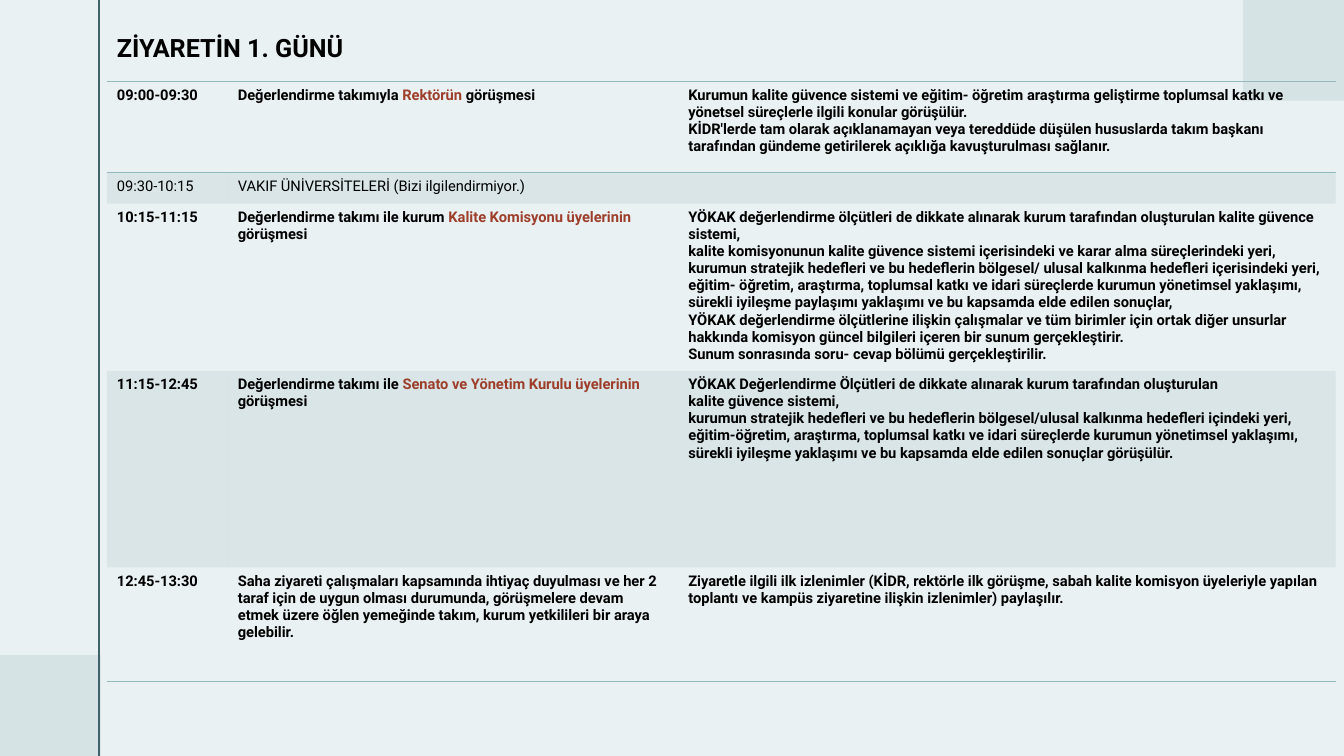
from lxml import etree
from pptx import Presentation
from pptx.dml.color import RGBColor
from pptx.enum.shapes import MSO_CONNECTOR, MSO_SHAPE
from pptx.enum.text import MSO_AUTO_SIZE
from pptx.oxml.ns import qn
from pptx.util import Pt

COLORS = {
    "background": "EAF1F2",
    "corner": "D5E3E5",
    "rail": "40636A",
    "table": "95B8BF",
    "text": "000000",
    "accent": "9D3E2B",
}
FONT = "Roboto"
WIDTH, HEIGHT = 960, 540
CORNER = 72
BODY_SIZE = 10.5
NO_STYLE = "{2D5ABB26-0587-4C30-8999-92F81FD0307C}"

COLUMN_WIDTHS = [86.4, 321.84, 469.44]
ROW_HEIGHTS = [64.8, 22.32, 119.52, 140.4, 81.36]
SHADED_ROWS = {1, 3}
PLAIN_ROWS = {1}
ROW_BORDERS = {0: ("lnT", "lnB"), 4: ("lnB",)}

# Asterisks enclose accented words; each line is a paragraph
SCHEDULE = [
    ("09:00-09:30",
     "Değerlendirme takımıyla *Rektörün *görüşmesi",
     "Kurumun kalite güvence sistemi ve eğitim- öğretim araştırma geliştirme toplumsal "
     "katkı ve yönetsel süreçlerle ilgili konular görüşülür.\n"
     "KİDR'lerde tam olarak açıklanamayan veya tereddüde düşülen hususlarda takım başkanı "
     "tarafından gündeme getirilerek açıklığa kavuşturulması sağlanır."),
    ("09:30-10:15", "VAKIF ÜNİVERSİTELERİ (Bizi ilgilendirmiyor.)", ""),
    ("10:15-11:15",
     "Değerlendirme takımı ile kurum *Kalite Komisyonu üyelerinin *görüşmesi",
     "YÖKAK değerlendirme ölçütleri de dikkate alınarak kurum tarafından oluşturulan "
     "kalite güvence sistemi,\n"
     "kalite komisyonunun kalite güvence sistemi içerisindeki ve karar alma süreçlerindeki "
     "yeri, kurumun stratejik hedefleri ve bu hedeflerin bölgesel/ ulusal kalkınma "
     "hedefleri içerisindeki yeri, eğitim- öğretim, araştırma, toplumsal katkı ve idari "
     "süreçlerde kurumun yönetimsel yaklaşımı, sürekli iyileşme paylaşımı yaklaşımı ve bu "
     "kapsamda elde edilen sonuçlar,\n"
     "YÖKAK değerlendirme ölçütlerine ilişkin çalışmalar ve tüm birimler için ortak diğer "
     "unsurlar hakkında komisyon güncel bilgileri içeren bir sunum gerçekleştirir.\n"
     "Sunum sonrasında soru- cevap bölümü gerçekleştirilir."),
    ("11:15-12:45",
     "Değerlendirme takımı ile *Senato ve Yönetim Kurulu üyelerinin *görüşmesi",
     "YÖKAK Değerlendirme Ölçütleri de dikkate alınarak kurum tarafından oluşturulan\n"
     "kalite güvence sistemi,\n"
     "kurumun stratejik hedefleri ve bu hedeflerin bölgesel/ulusal kalkınma hedefleri "
     "içindeki yeri, eğitim-öğretim, araştırma, toplumsal katkı ve idari süreçlerde "
     "kurumun yönetimsel yaklaşımı, sürekli iyileşme yaklaşımı ve bu kapsamda elde edilen "
     "sonuçlar görüşülür."),
    ("12:45-13:30",
     "Saha ziyareti çalışmaları kapsamında ihtiyaç duyulması ve her 2 taraf için de uygun "
     "olması durumunda, görüşmelere devam etmek üzere öğlen yemeğinde takım, kurum "
     "yetkilileri bir araya gelebilir.",
     "Ziyaretle ilgili ilk izlenimler (KİDR, rektörle ilk görüşme, sabah kalite komisyon "
     "üyeleriyle yapılan toplantı ve kampüs ziyaretine ilişkin izlenimler) paylaşılır."),
]


def color(name):
    return RGBColor.from_string(COLORS[name])


def write_text(text_frame, text, size=BODY_SIZE, bold=True):
    for index, line in enumerate(text.split("\n")):
        paragraph = text_frame.paragraphs[0] if index == 0 else text_frame.add_paragraph()
        if not line:
            # An empty cell keeps the body size so its row stays low
            etree.SubElement(paragraph._p, qn("a:endParaRPr"), sz=str(int(size * 100)))
            continue
        for part, words in enumerate(line.split("*")):
            run = paragraph.add_run()
            run.text = words
            run.font.name = FONT
            run.font.size = Pt(size)
            run.font.bold = bold
            run.font.color.rgb = color("accent" if part % 2 else "text")


def add_corner(slide, left, top):
    shape = slide.shapes.add_shape(
        MSO_SHAPE.RECTANGLE, Pt(left), Pt(top), Pt(CORNER), Pt(CORNER))
    shape.shadow.inherit = False
    shape.fill.solid()
    shape.fill.fore_color.rgb = color("corner")
    shape.line.fill.background()


def add_rail(slide, x):
    rail = slide.shapes.add_connector(
        MSO_CONNECTOR.STRAIGHT, Pt(x), Pt(0), Pt(x), Pt(HEIGHT))
    rail.line.color.rgb = color("rail")
    rail.line.width = Pt(1.5)
    etree.SubElement(rail._element.spPr, qn("a:effectLst"))


def add_title(slide, text):
    box = slide.shapes.add_textbox(Pt(76.32), Pt(19.4), Pt(188.6), Pt(29))
    box.text_frame.word_wrap = True
    box.text_frame.auto_size = MSO_AUTO_SIZE.SHAPE_TO_FIT_TEXT
    write_text(box.text_frame, text, size=18)


def add_border(cell, side):
    properties = cell._tc.get_or_add_tcPr()
    line = etree.SubElement(properties, qn(f"a:{side}"), w=str(Pt(1)))
    fill = etree.SubElement(line, qn("a:solidFill"))
    etree.SubElement(fill, qn("a:srgbClr"), val=COLORS["table"])


def shade(cell):
    cell.fill.solid()
    cell.fill.fore_color.rgb = color("table")
    value = cell._tc.tcPr.find(f".//{qn('a:solidFill')}/{qn('a:srgbClr')}")
    etree.SubElement(value, qn("a:alpha"), val="20000")


def add_schedule(slide):
    frame = slide.shapes.add_table(
        len(ROW_HEIGHTS), len(COLUMN_WIDTHS), Pt(76.32), Pt(58.32),
        Pt(sum(COLUMN_WIDTHS)), Pt(sum(ROW_HEIGHTS)))
    table = frame.table
    table.first_row = table.horz_banding = False
    table._tbl.tblPr.find(qn("a:tableStyleId")).text = NO_STYLE
    for column, width in zip(table.columns, COLUMN_WIDTHS):
        column.width = Pt(width)
    for index, (row, height) in enumerate(zip(table.rows, ROW_HEIGHTS)):
        row.height = Pt(height)
        for cell, text in zip(row.cells, SCHEDULE[index]):
            write_text(cell.text_frame, text, bold=index not in PLAIN_ROWS)
            for side in ROW_BORDERS.get(index, ()):
                add_border(cell, side)
            if index in SHADED_ROWS:
                shade(cell)
            else:
                cell.fill.background()


def main():
    presentation = Presentation()
    presentation.slide_width, presentation.slide_height = Pt(WIDTH), Pt(HEIGHT)
    slide = presentation.slides.add_slide(presentation.slide_layouts[6])
    slide.background.fill.solid()
    slide.background.fill.fore_color.rgb = color("background")

    # Decoration
    add_corner(slide, 0, HEIGHT - CORNER)
    add_corner(slide, WIDTH - CORNER, 0)
    add_rail(slide, 70.6)

    # Content
    add_schedule(slide)
    add_title(slide, "ZİYARETİN 1. GÜNÜ")
    presentation.save("out.pptx")


if __name__ == "__main__":
    main()
